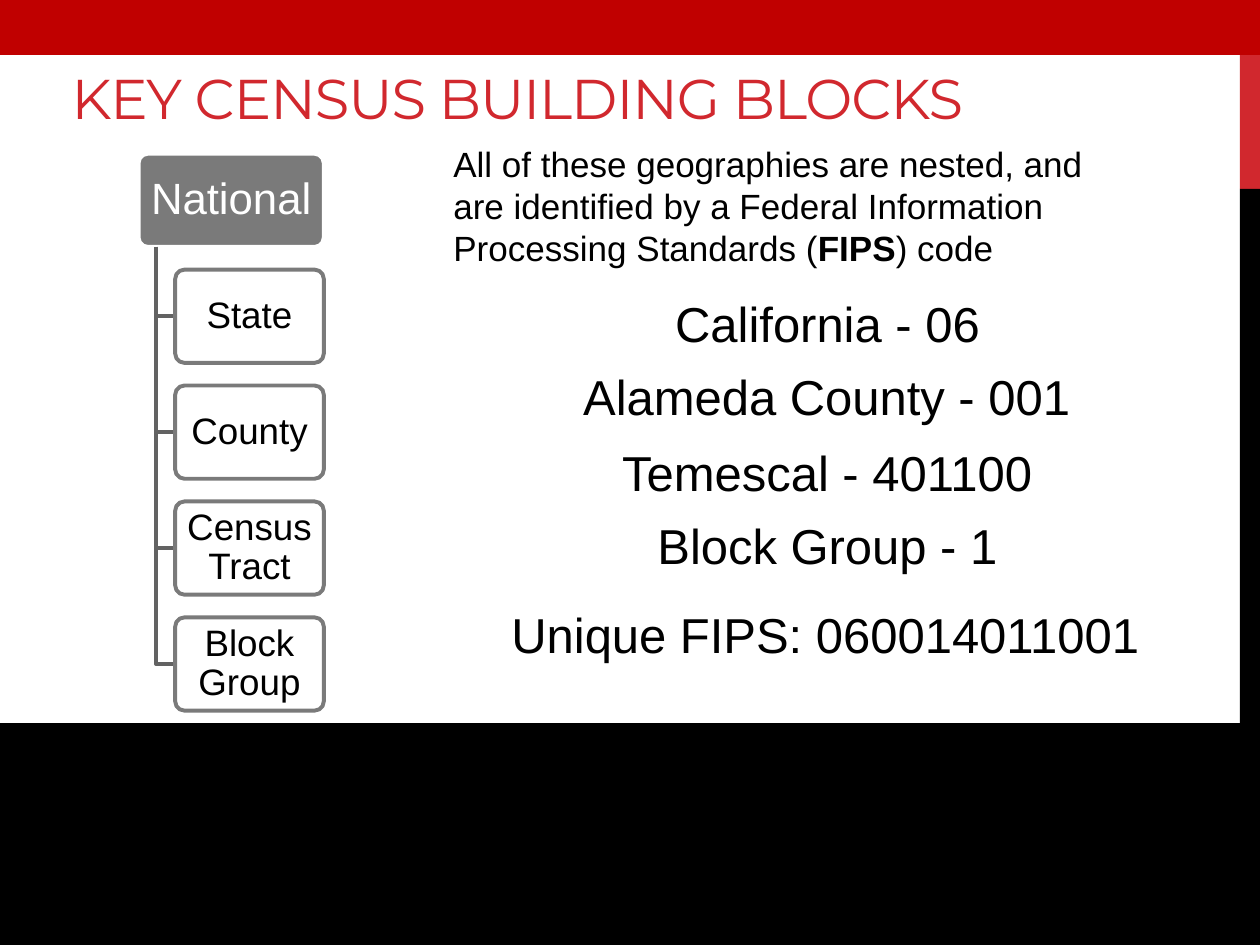
from lxml.etree import SubElement
from pptx import Presentation
from pptx.dml.color import RGBColor
from pptx.enum.shapes import MSO_SHAPE as Shape
from pptx.enum.text import MSO_ANCHOR as Anchor, MSO_AUTO_SIZE as Fit, PP_ALIGN as Align
from pptx.oxml.ns import qn
from pptx.util import Inches, Pt

BLACK = RGBColor(0x00, 0x00, 0x00)
WHITE = RGBColor(0xFF, 0xFF, 0xFF)
RED = RGBColor(0xD1, 0x28, 0x2E)
DARK_RED = RGBColor(0xC0, 0x00, 0x00)
GRAY = RGBColor(0x7A, 0x7A, 0x7A)
DARK_GRAY = RGBColor(0x62, 0x62, 0x62)


class Deck:
    """Holds the style and the current slide, and draws each kind of element."""

    face = "Arial"
    stroke = Pt(2.25)

    def __init__(self, wide, high):
        self.file = Presentation()
        self.file.slide_width, self.file.slide_height = Inches(wide), Inches(high)
        self.slide = self.file.slides.add_slide(self.file.slide_layouts[6])

    def style(self, item, form):
        for name, value in form.items():
            setattr(item, name, value)

    def border(self, shape, color):
        shape.shadow.inherit = False
        if color is None:
            shape.line.fill.background()
        else:
            shape.line.color.rgb = color
            shape.line.width = self.stroke

    def words(self, part, text, size, color=BLACK, **form):
        run = part.add_run()
        run.text = text
        self.style(run.font, {"name": self.face, "size": Pt(size), "bold": False, **form})
        run.font.color.rgb = color
        return run

    def block(self, kind, spot, fill, line=None):
        shape = self.slide.shapes.add_shape(kind, *map(Inches, spot))
        shape.fill.solid()
        shape.fill.fore_color.rgb = fill
        self.border(shape, line)
        return shape

    def node(self, spot, text, size, color, fill, line, side, alpha=100):
        shape = self.block(Shape.ROUNDED_RECTANGLE, spot, fill, line)
        shape.adjustments[0] = 0.1
        if alpha < 100:
            tint = shape.element.spPr.find(qn("a:solidFill"))[0]
            SubElement(tint, qn("a:alpha"), val=str(alpha * 1000))
        frame = shape.text_frame
        self.style(frame, {
            "word_wrap": True, "vertical_anchor": Anchor.MIDDLE,
            "margin_left": Inches(side), "margin_right": Inches(side),
            "margin_top": Inches(0.03), "margin_bottom": Inches(0.03),
        })
        part = frame.paragraphs[0]
        self.style(part, {"alignment": Align.CENTER, "line_spacing": 0.9})
        self.words(part, text, size, color)

    def branch(self, *points):
        start, *rest = [tuple(map(Inches, point)) for point in points]
        route = self.slide.shapes.build_freeform(*start)
        route.add_line_segments(rest, close=False)
        shape = route.convert_to_shape()
        shape.fill.background()
        self.border(shape, DARK_GRAY)

    def label(self, spot, **form):
        frame = self.slide.shapes.add_textbox(*map(Inches, spot)).text_frame
        self.style(frame, {"word_wrap": True, **form})
        return frame.paragraphs[0]


def main():
    deck = Deck(10, 7.5)

    deck.block(Shape.RECTANGLE, (9.84, 0, 0.16, 1.5), RED)
    deck.block(Shape.RECTANGLE, (9.84, 1.5, 0.16, 6), BLACK)
    deck.block(Shape.RECTANGLE, (0, 5.75, 10, 1.75), BLACK, BLACK)
    deck.block(Shape.RECTANGLE, (0, 0, 10, 0.42), DARK_RED, DARK_RED)

    title = deck.label((0.47, 0.34, 8.67, 0.75), vertical_anchor=Anchor.BOTTOM)
    run = deck.words(title, "KEY CENSUS BUILDING BLOCKS", 32, RED, name="Montserrat")
    run._r.get_or_add_rPr().set("spc", "-60")

    top, high, step = 1.22, 0.74, 0.92
    trunk, left = 1.24, 1.39
    deck.node((1.1, top, 1.47, high), "National", 25, WHITE, GRAY, WHITE, 0.05)
    for row, name in enumerate(("State", "County", "Census Tract", "Block Group"), 1):
        y = top + row * step
        mid = y + high / 2
        deck.branch((trunk, top + high), (trunk, mid), (left, mid))
        deck.node((left, y, 1.18, high), name, 21, BLACK, WHITE, GRAY, 0.04, 90)

    intro = deck.label((3.5, 1.08, 5.67, 1.11), auto_size=Fit.SHAPE_TO_FIT_TEXT)
    deck.words(intro, "All of these geographies are nested, and are identified by a "
                      "Federal Information Processing Standards (", 20)
    deck.words(intro, "FIPS", 20, bold=True)
    deck.words(intro, ") code", 20)

    codes = (
        (5.26, 2.28, 2.65, "California - 06"),
        (4.53, 2.86, 4.12, "Alameda County - 001"),
        (4.84, 3.46, 3.5, "Temescal - 401100"),
        (5.12, 4.04, 2.93, "Block Group - 1"),
        (3.96, 4.75, 5.25, "Unique FIPS: 060014011001"),
    )
    for x, y, wide, text in codes:
        part = deck.label((x, y, wide, 0.57), word_wrap=False,
                          auto_size=Fit.SHAPE_TO_FIT_TEXT)
        deck.words(part, text, 28)

    deck.file.save("out.pptx")


if __name__ == "__main__":
    main()
